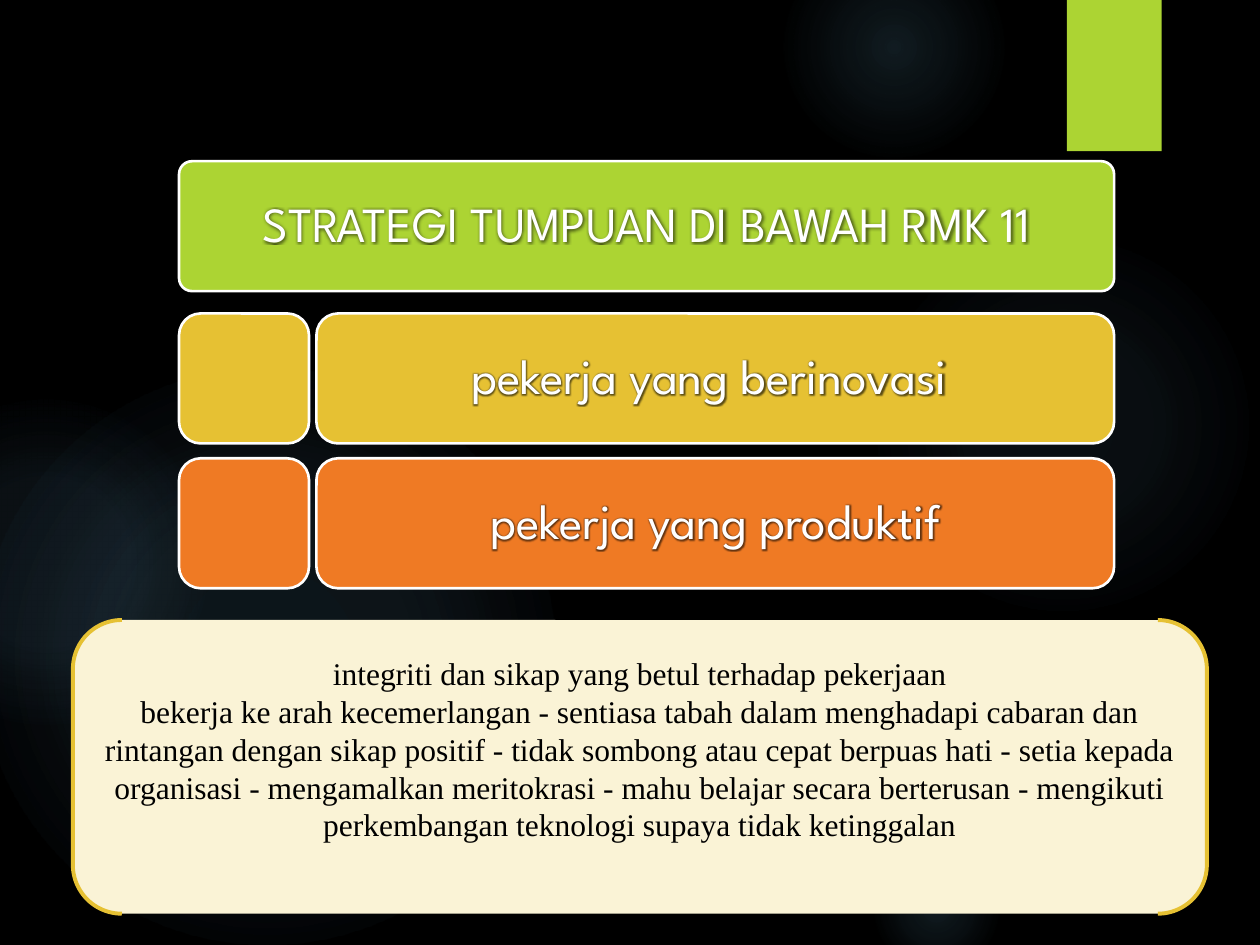
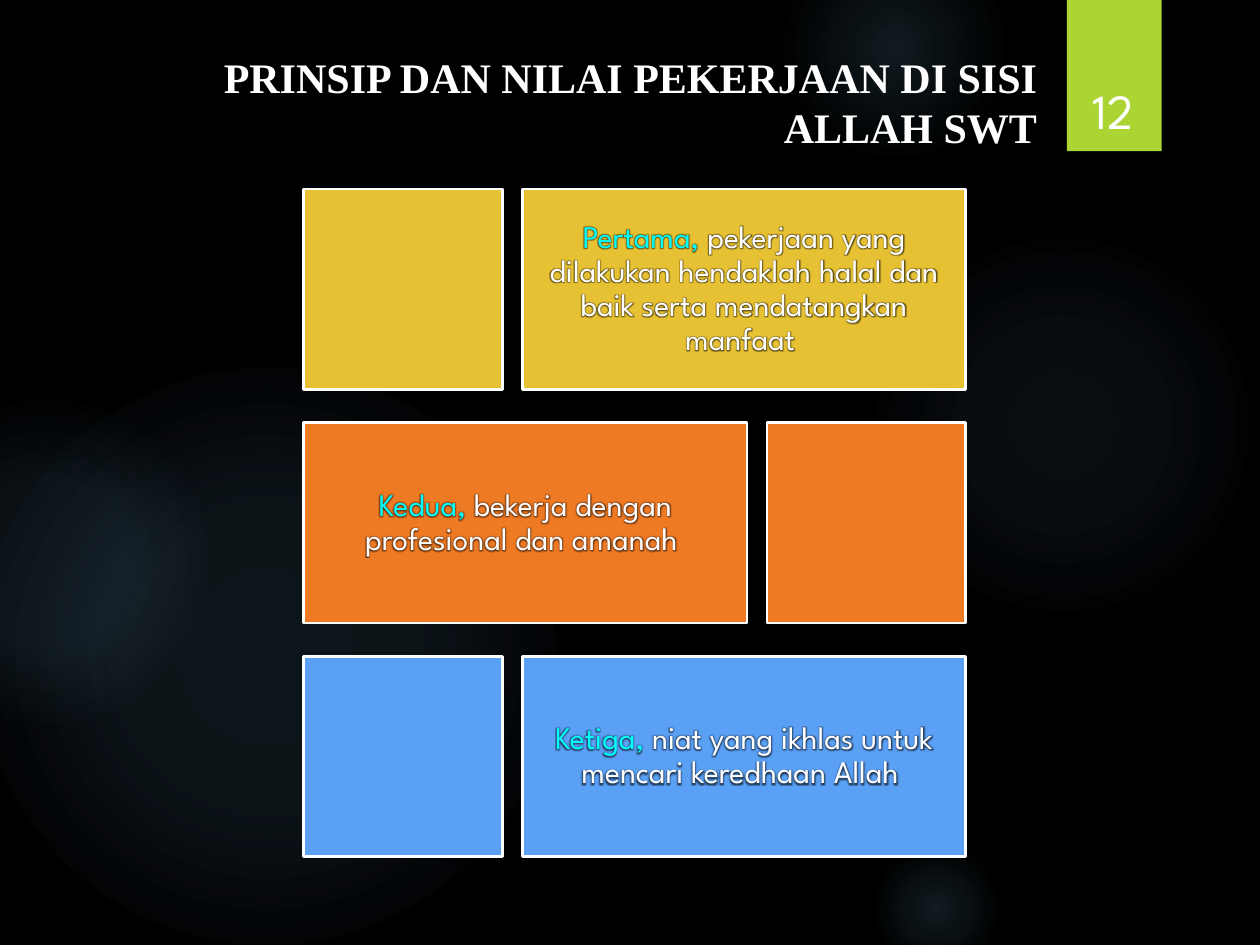
"""Build two dark slides on work strategy and the principles of work."""
from pptx import Presentation
from pptx.dml.color import RGBColor
from pptx.enum.shapes import MSO_SHAPE
from pptx.enum.text import MSO_ANCHOR, MSO_AUTO_SIZE, PP_ALIGN
from pptx.oxml import parse_xml
from pptx.oxml.ns import nsdecls, qn
from pptx.util import Cm, Pt

RECTANGLE, ROUNDED = MSO_SHAPE.RECTANGLE, MSO_SHAPE.ROUNDED_RECTANGLE
OVAL, BRACKETS = MSO_SHAPE.OVAL, MSO_SHAPE.DOUBLE_BRACKET
MIDDLE, BOTTOM = MSO_ANCHOR.MIDDLE, MSO_ANCHOR.BOTTOM
CENTER, RIGHT = PP_ALIGN.CENTER, PP_ALIGN.RIGHT
NO_AUTOFIT = MSO_AUTO_SIZE.NONE

COLORS = {
    "black": "000000", "white": "FFFFFF", "green": "ACD433", "gold": "E6C133",
    "orange": "EF7A24", "blue": "5AA0F5", "cream": "FAF3D6", "cyan": "00FFFF",
    "light": "7AC4F0",
}
SANS, SERIF = "League Spartan", "Times New Roman"
TITLE_ONLY, BLANK = 5, 6

LIGHTS = [
    (17.5, 4.65, 7.82, ((0, 7), (36, 6), (69, 0))),
    (15.8, -1.27, 4.45, ((0, 14), (36, 7), (73, 0))),
    (17.5, 16.94, 2.74, ((0, 14), (36, 7), (66, 0))),
    (-0.43, 7.42, 11.63, ((0, 11), (36, 10), (75, 0))),
    (-2.34, 8.05, 6.55, ((0, 8), (36, 8), (72, 0))),
]


def color(name):
    """Return the named colour."""
    return RGBColor.from_string(COLORS[name])


class Painter:
    """Hold the deck's style and the current slide."""

    def __init__(self, deck):
        """Start without a slide."""
        self.deck = deck
        self.page = None

    def new_page(self, layout):
        """Add a slide and make it the current one."""
        self.page = self.deck.slides.add_slide(self.deck.slide_layouts[layout])

    def shape(self, kind, left, top, width, height, fill=None, line=None, weight=1.5):
        """Draw a preset shape without a shadow."""
        box = self.page.shapes.add_shape(kind, Cm(left), Cm(top), Cm(width), Cm(height))
        box.shadow.inherit = False
        if fill:
            box.fill.solid()
            box.fill.fore_color.rgb = color(fill)
        else:
            box.fill.background()
        if line:
            box.line.color.rgb = color(line)
            box.line.width = Pt(weight)
        else:
            box.line.fill.background()
        return box

    def light(self, left, top, size, stops):
        """Draw a round light that fades outwards."""
        spot = self.shape(OVAL, left, top, size, size)
        marks = "".join(
            f'<a:gs pos="{place * 1000}"><a:srgbClr val="{COLORS["light"]}">'
            f'<a:alpha val="{alpha * 1000}"/></a:srgbClr></a:gs>'
            for place, alpha in stops)
        gradient = parse_xml(
            f'<a:gradFill {nsdecls("a")}><a:gsLst>{marks}</a:gsLst><a:path path="circle">'
            '<a:fillToRect l="50000" t="50000" r="50000" b="50000"/></a:path></a:gradFill>')
        properties = spot.element.spPr
        properties.replace(properties.find(qn("a:noFill")), gradient)
        return spot

    def master(self):
        """Move the lights and the green tab from the current slide to the master."""
        master = self.deck.slide_master
        master.background.fill.solid()
        master.background.fill.fore_color.rgb = color("black")
        shapes = [self.light(*light) for light in LIGHTS]
        shapes.append(self.shape(RECTANGLE, 21.51, 0, 1.91, 3.05, "green"))
        for index, shape in enumerate(shapes):
            shape.element.nvSpPr.cNvPr.set("id", str(101 + index))
            master.shapes.element.insert(2 + index, shape.element)

    def style(self, span, size, font, ink, bold=False):
        """Format one run."""
        span.font.size = Pt(size)
        span.font.bold = bold
        span.font.color.rgb = color(ink)
        span.font.name = font

    def glow(self, box):
        """Put a dark glow behind every run of a shape."""
        for properties in box.element.iter(qn("a:rPr")):
            effect = parse_xml(
                f'<a:effectLst {nsdecls("a")}><a:glow rad="{Pt(2.5)}">'
                f'<a:srgbClr val="{COLORS["black"]}"><a:alpha val="60000"/></a:srgbClr>'
                '</a:glow></a:effectLst>')
            properties.find(qn("a:solidFill")).addnext(effect)

    def label(self, box, text, size, font=SANS, ink="white", align=CENTER,
              anchor=MIDDLE, spacing=None, bold=False):
        """Set the text of a shape and format all its runs."""
        frame = box.text_frame
        frame.text = text
        frame.word_wrap = True
        frame.auto_size = NO_AUTOFIT
        frame.vertical_anchor = anchor
        for para in frame.paragraphs:
            para.alignment = align
            para.line_spacing = spacing
            for span in para.runs:
                self.style(span, size, font, ink, bold)
        return frame

    def tile(self, kind, left, top, width, height, fill, text="", size=28, lead=""):
        """Draw a white-edged tile whose text may open with a cyan word."""
        box = self.shape(kind, left, top, width, height, fill, "white")
        if text:
            frame = self.label(box, lead or text, size, spacing=0.9)
            frame.margin_left = frame.margin_right = Cm(0.18)
            if lead:
                para = frame.paragraphs[0]
                para.runs[0].font.color.rgb = color("cyan")
                rest = para.add_run()
                rest.text = text
                self.style(rest, size, SANS, "white")
            self.glow(box)
        return box

    def title(self, text):
        """Place and format the title placeholder."""
        holder = self.page.shapes.title
        holder.left, holder.top = Cm(3.81), Cm(0.89)
        holder.width, holder.height = Cm(17.35), Cm(2.31)
        self.label(holder, text, 24, SERIF, align=RIGHT, bold=True)

    def number(self, text):
        """Put the page number on the green tab."""
        box = self.page.shapes.add_textbox(Cm(21.56), Cm(0.81), Cm(1.75), Cm(2.13))
        self.label(box, text, 28, anchor=BOTTOM)


def strategy_page(painter):
    """Draw the strategy banner, its two aims and the note below."""
    left, height, gap, width = 3.61, 2.62, 0.15, 18.85
    banner = painter.tile(ROUNDED, left, 3.25, width, height, "green",
                          "STRATEGI TUMPUAN DI BAWAH RMK 11")
    banner.adjustments[0] = 0.1
    aims = [("gold", "pekerja yang berinovasi "), ("orange", "pekerja yang produktif")]
    for row, (fill, text) in enumerate(aims):
        top = 6.32 + row * 2.92
        painter.tile(ROUNDED, left, top, height, height, fill)
        painter.tile(ROUNDED, left + height + gap, top, width - height - gap, height,
                     fill, text)
    note = painter.shape(BRACKETS, 1.47, 12.5, 22.86, 5.92, "cream", "gold", 2.25)
    frame = painter.label(
        note,
        "integriti dan sikap yang betul terhadap pekerjaan\n"
        "bekerja ke arah kecemerlangan - sentiasa tabah dalam menghadapi cabaran dan "
        "rintangan dengan sikap positif - tidak sombong atau cepat berpuas hati - setia "
        "kepada organisasi - mengamalkan meritokrasi - mahu belajar secara berterusan - "
        "mengikuti perkembangan teknologi supaya tidak ketinggalan",
        18, SERIF, "black")
    frame.margin_bottom = Cm(0.86)


def principles_page(painter):
    """Draw three principles beside plain tiles on alternating sides."""
    painter.title("PRINSIP DAN NILAI PEKERJAAN DI SISI ALLAH SWT")
    painter.number("12")
    left, height, wide, narrow, gap = 6.12, 4.04, 8.94, 4.01, 0.4
    principles = [
        ("gold", "Pertama,",
         " pekerjaan yang dilakukan hendaklah halal dan baik serta mendatangkan manfaat "),
        ("orange", "Kedua,", " bekerja dengan profesional dan amanah "),
        ("blue", "Ketiga,", " niat yang ikhlas untuk mencari keredhaan Allah "),
    ]
    for row, (fill, lead, text) in enumerate(principles):
        top = 3.81 + row * 4.71
        text_left, plain_left = left + narrow + gap, left
        if row % 2:
            text_left, plain_left = left, left + wide + gap
        painter.tile(RECTANGLE, text_left, top, wide, height, fill, text, 18, lead)
        painter.tile(RECTANGLE, plain_left, top, narrow, height, fill)


def main():
    """Build and save the deck."""
    deck = Presentation()
    deck.slide_width, deck.slide_height = Cm(25.4), Cm(19.05)
    painter = Painter(deck)
    painter.new_page(BLANK)
    painter.master()
    strategy_page(painter)
    painter.new_page(TITLE_ONLY)
    principles_page(painter)
    deck.save("out.pptx")


if __name__ == "__main__":
    main()
